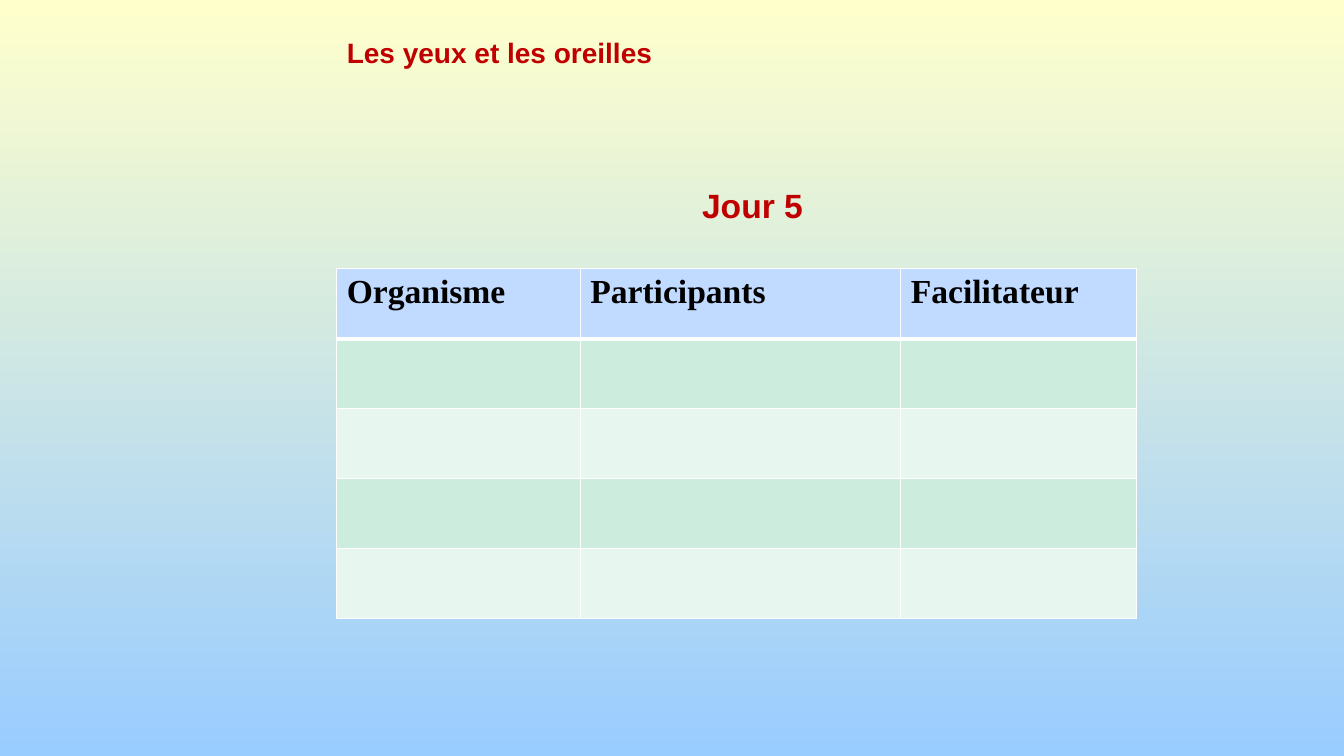
from lxml.etree import SubElement
from pptx import Presentation
from pptx.dml.color import RGBColor
from pptx.enum.text import MSO_ANCHOR as Anchor, PP_ALIGN as Align
from pptx.oxml.ns import qn
from pptx.util import Pt

RED = RGBColor(0xC0, 0x00, 0x00)
BLACK = RGBColor(0x00, 0x00, 0x00)
WHITE = RGBColor(0xFF, 0xFF, 0xFF)
CREAM = RGBColor(0xFF, 0xFF, 0xCC)
SKY = RGBColor(0x99, 0xCC, 0xFF)
HEADER_BLUE = RGBColor(0xC1, 0xDA, 0xFF)
BANDS = (RGBColor(0xCC, 0xEC, 0xDE), RGBColor(0xE7, 0xF6, 0xEF))

HEADERS = ("Organisme", "Participants", "Facilitateur")
COLUMN_WIDTHS = (174, 229, 168.5)
ROW_COUNT = 5
ROW_HEIGHT = 50


class SlideBuilder:
    heading_font = "Arial"
    table_font = "Times New Roman"

    def __init__(self, page):
        self.page = page

    def background(self, top, bottom):
        fill = self.page.background.fill
        fill.gradient()
        fill.gradient_angle = 270
        for stop, color in zip(fill.gradient_stops, (top, bottom)):
            stop.color.rgb = color

    def add_text(self, frame, text, font, size, color, align=Align.LEFT):
        para = frame.paragraphs[0]
        para.alignment = align
        span = para.add_run()
        span.text = text
        span.font.name = font
        span.font.size = Pt(size)
        span.font.bold = True
        span.font.color.rgb = color

    def heading(self, box, text, size, align=Align.LEFT):
        frame = box.text_frame
        frame.word_wrap = True
        frame.vertical_anchor = Anchor.TOP
        self.add_text(frame, text, self.heading_font, size, RED, align)

    def title(self, text, left, top, width, height):
        box = self.page.shapes.title
        box.left, box.top = Pt(left), Pt(top)
        box.width, box.height = Pt(width), Pt(height)
        self.heading(box, text, 20)

    def label(self, text, left, top, width, height):
        box = self.page.shapes.add_textbox(Pt(left), Pt(top), Pt(width), Pt(height))
        self.heading(box, text, 24, Align.CENTER)

    def borders(self, cell, **widths):
        properties = cell._tc.get_or_add_tcPr()
        for side in "LRTB":
            line = SubElement(properties, qn(f"a:ln{side}"), w=str(Pt(widths.get(side, 1))))
            solid = SubElement(line, qn("a:solidFill"))
            SubElement(solid, qn("a:srgbClr"), val=str(WHITE))

    def table(self, left, top):
        grid = self.page.shapes.add_table(
            ROW_COUNT, len(HEADERS), Pt(left), Pt(top),
            Pt(sum(COLUMN_WIDTHS)), Pt(ROW_COUNT * ROW_HEIGHT)).table
        for column, width in zip(grid.columns, COLUMN_WIDTHS):
            column.width = Pt(width)
        for index, row in enumerate(grid.rows):
            row.height = Pt(ROW_HEIGHT)
            # Thick rule between the header and the first band
            edges = {0: {"B": 3}, 1: {"T": 3}}.get(index, {})
            for cell in row.cells:
                self.borders(cell, **edges)
                cell.fill.solid()
                cell.fill.fore_color.rgb = BANDS[(index - 1) % 2] if index else HEADER_BLUE
        for cell, text in zip(grid.rows[0].cells, HEADERS):
            self.add_text(cell.text_frame, text, self.table_font, 24, BLACK)


def main():
    deck = Presentation()
    deck.slide_width, deck.slide_height = Pt(960), Pt(540)
    builder = SlideBuilder(deck.slides.add_slide(deck.slide_layouts[5]))

    # Background and title
    builder.background(CREAM, SKY)
    builder.title("Les yeux et les oreilles", 240.5, 21.6, 672, 90)

    # Day schedule
    builder.table(240.5, 192)
    builder.label("Jour 5", 262.8, 128.2, 549.4, 57.6)

    deck.save("out.pptx")


if __name__ == "__main__":
    main()
